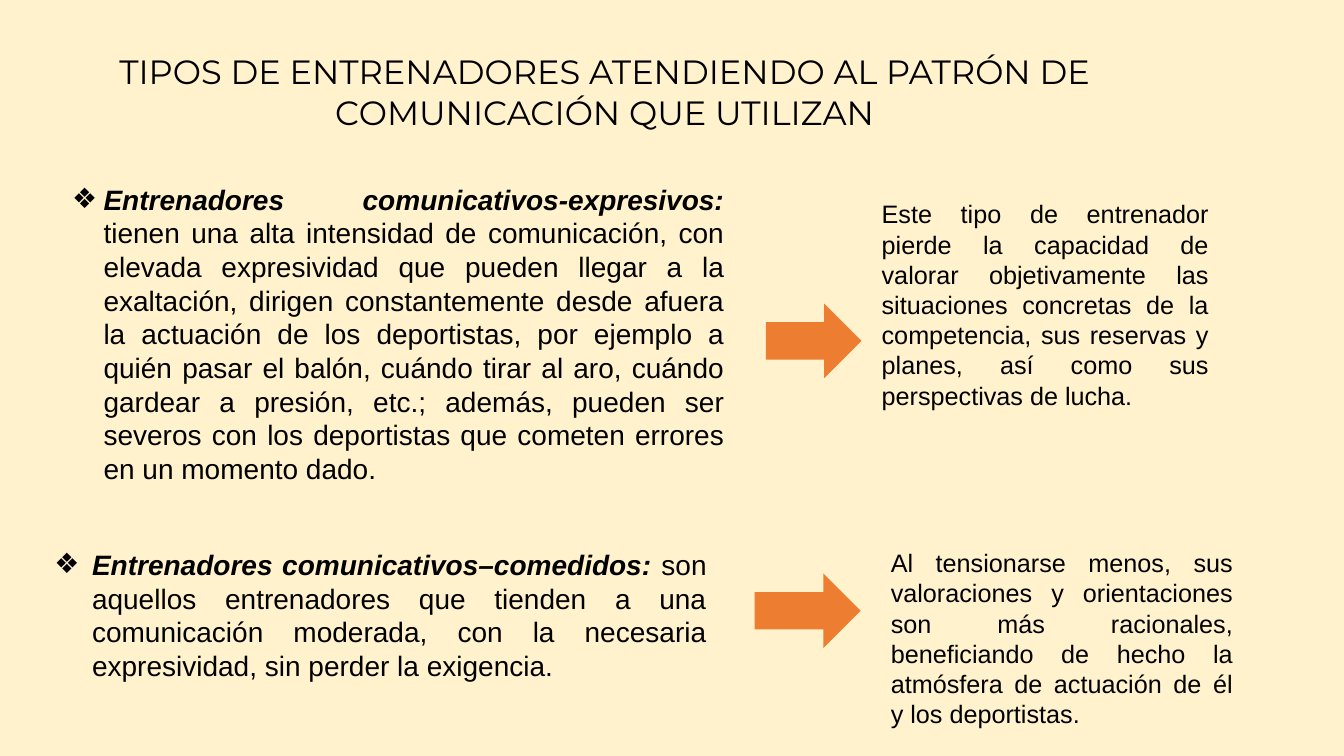
import pptx
import pptx.dml.color
import pptx.enum.shapes
import pptx.enum.text
import pptx.util
from lxml import etree
from pptx.oxml.ns import qn

Cm = pptx.util.Cm
Align = pptx.enum.text.PP_ALIGN


def color(value):
    return pptx.dml.color.RGBColor.from_string(value)


class CoachSlide:
    background = "FFF2CC"
    ink = "000000"
    accent = "ED7D31"
    title_font = "Montserrat"
    body_font = "Arial"

    def __init__(self, deck):
        self.slide = deck.slides.add_slide(deck.slide_layouts[6])
        fill = self.slide.background.fill
        fill.solid()
        fill.fore_color.rgb = color(self.background)

    def text(self, place, words, size, font=body_font, align=Align.JUSTIFY):
        box = self.slide.shapes.add_textbox(*map(Cm, place))
        box.text_frame.word_wrap = True
        para = box.text_frame.paragraphs[0]
        para.text = words
        para.alignment = align
        self.style(para.runs[0], size, font)
        return para

    def style(self, span, size, font):
        span.font.size = pptx.util.Pt(size)
        span.font.name = font
        span.font.color.rgb = color(self.ink)

    def title(self, place, words):
        self.text(place, words, 24, self.title_font, Align.CENTER)

    def coach_type(self, place, indent, name, description):
        para = self.text(place, name, 20)
        para.runs[0].font.bold = True
        para.runs[0].font.italic = True
        span = para.add_run()
        span.text = " " + description
        self.style(span, 20, self.body_font)
        properties = para._p.get_or_add_pPr()
        properties.set("marL", str(Cm(indent)))
        properties.set("indent", str(-Cm(indent)))
        etree.SubElement(properties, qn("a:buFont")).set("typeface", self.body_font)
        etree.SubElement(properties, qn("a:buChar")).set("char", "❖")

    def consequence(self, place, words):
        self.text(place, words, 18)

    def arrow(self, place):
        kind = pptx.enum.shapes.MSO_SHAPE.RIGHT_ARROW
        shape = self.slide.shapes.add_shape(kind, *map(Cm, place))
        shape.shadow.inherit = False
        shape.fill.solid()
        shape.fill.fore_color.rgb = color(self.accent)
        shape.line.fill.background()


def main():
    deck = pptx.Presentation()
    deck.slide_width = Cm(33.87)
    deck.slide_height = Cm(19.05)
    page = CoachSlide(deck)

    page.title(
        (1.57, 1.17, 27.33, 2.31),
        "TIPOS DE ENTRENADORES ATENDIENDO AL PATRÓN DE COMUNICACIÓN QUE UTILIZAN",
    )
    page.coach_type(
        (1.57, 4.47, 16.94, 7.95),
        0.79,
        "Entrenadores comunicativos-expresivos:",
        "tienen una alta intensidad de comunicación, con elevada expresividad que "
        "pueden llegar a la exaltación, dirigen constantemente desde afuera la "
        "actuación de los deportistas, por ejemplo a quién pasar el balón, cuándo "
        "tirar al aro, cuándo gardear a presión, etc.; además, pueden ser severos "
        "con los deportistas que cometen errores en un momento dado.",
    )
    page.coach_type(
        (1.12, 13.67, 16.94, 3.68),
        0.95,
        "Entrenadores comunicativos–comedidos:",
        "son aquellos entrenadores que tienden a una comunicación moderada, con la "
        "necesaria expresividad, sin perder la exigencia.",
    )
    page.consequence(
        (21.97, 4.88, 8.74, 5.64),
        "Este tipo de entrenador pierde la capacidad de valorar objetivamente las "
        "situaciones concretas de la competencia, sus reservas y planes, así como "
        "sus perspectivas de lucha.",
    )
    page.consequence(
        (22.2, 13.67, 9.12, 4.88),
        "Al tensionarse menos, sus valoraciones y orientaciones son más racionales, "
        "beneficiando de hecho la atmósfera de actuación de él y los deportistas.",
    )
    page.arrow((19.3, 7.65, 2.41, 1.88))
    page.arrow((19.02, 14.45, 2.67, 1.88))

    deck.save("out.pptx")


if __name__ == "__main__":
    main()
